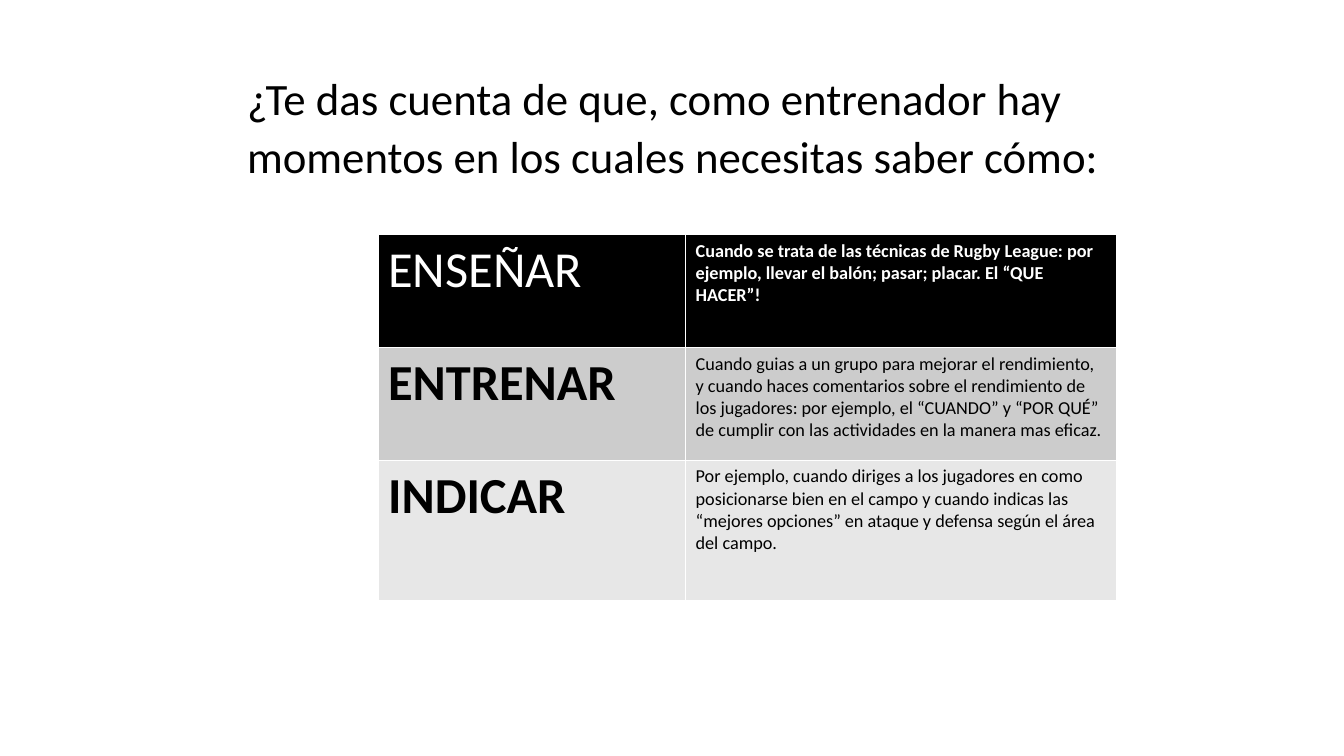
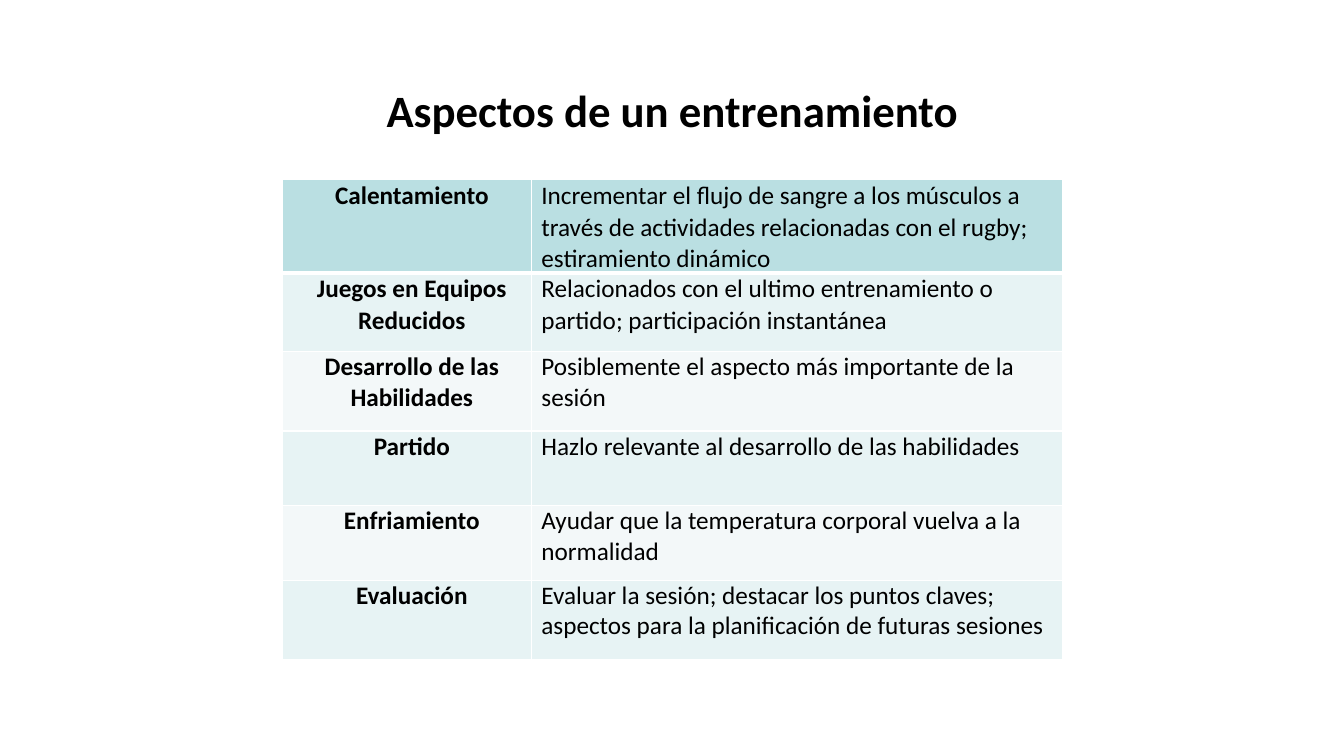
"""Build two slides on coaching roles and the parts of a training session."""
from dataclasses import dataclass

from lxml import etree
from pptx import Presentation
from pptx.dml.color import RGBColor
from pptx.enum import text
from pptx.oxml import ns
from pptx.util import Inches, Pt

FONT = "Calibri"
TITLE_SIZE = 32
COLOURS = {
    "black": "000000", "white": "FFFFFF", "mid grey": "CCCCCC", "light grey": "E7E7E7",
    "teal": "BADFE2", "pale teal": "E7F3F4", "mist": "F3F8F9",
}


@dataclass
class Row:
    label: str
    detail: str
    height: float
    fill: str
    colour: str = "black"
    label_bold: bool = True
    detail_bold: bool = False
    line_spacing: float = 1.0


@dataclass
class Style:
    label_size: float
    detail_size: float
    label_align: int
    margins: tuple
    space_before: float = 0
    divider: float = 1


ROLE_STYLE = Style(36, 13, text.PP_ALIGN.LEFT, (0.1, 0.05, 0.1, 0.05))
ROLES = [
    Row("ENSEÑAR",
        "Cuando se trata de las técnicas de Rugby League: por ejemplo, llevar el balón; "
        "pasar; placar. El “QUE HACER”!",
        1.12, "black", "white", label_bold=False, detail_bold=True),
    Row("ENTRENAR",
        "Cuando guias a un grupo para mejorar el rendimiento, y cuando haces comentarios "
        "sobre el rendimiento de los jugadores: por ejemplo, el “CUANDO” y “POR QUÉ” de "
        "cumplir con las actividades en la manera mas eficaz.",
        1.12, "mid grey"),
    Row("INDICAR",
        "Por ejemplo, cuando diriges a los jugadores en como posicionarse bien en el campo "
        "y cuando indicas las “mejores opciones” en ataque y defensa según el área del campo.",
        1.39, "light grey"),
]

SESSION_STYLE = Style(18, 18, text.PP_ALIGN.CENTER, (0.1, 0, 0, 0), space_before=3.8, divider=3)
SESSION = [
    Row("Calentamiento",
        "Incrementar el flujo de sangre a los músculos a través de actividades relacionadas "
        "con el rugby; estiramiento dinámico",
        0.92, "teal", line_spacing=1.03),
    Row("Juegos en Equipos Reducidos",
        "Relacionados con el ultimo entrenamiento o partido; participación instantánea",
        0.78, "pale teal", line_spacing=1.03),
    Row("Desarrollo de las Habilidades",
        "Posiblemente el aspecto más importante de la sesión", 0.79, "mist"),
    Row("Partido", "Hazlo relevante al desarrollo de las habilidades", 0.74, "pale teal"),
    Row("Enfriamiento", "Ayudar que la temperatura corporal vuelva a la normalidad",
        0.74, "mist"),
    Row("Evaluación",
        "Evaluar la sesión; destacar los puntos claves; aspectos para la planificación "
        "de futuras sesiones",
        0.79, "pale teal"),
]


def rgb(name):
    """Return the named colour."""
    return RGBColor.from_string(COLOURS[name])


def add_run(paragraph, words, size, bold, colour="black"):
    """Add one formatted run."""
    run = paragraph.add_run()
    run.text = words
    run.font.name = FONT
    run.font.size = Pt(size)
    run.font.bold = bold
    run.font.color.rgb = rgb(colour)


def add_titled_slide(deck, words, top, height, bold, align, margins=(0.1, 0.1), spacing=1.0, after=0):
    """Add a slide whose title placeholder carries the heading."""
    slide = deck.slides.add_slide(deck.slide_layouts.get_by_name("Title Only"))
    heading = slide.shapes.title
    heading.left, heading.top = Inches(1.67), Inches(top)
    heading.width, heading.height = Inches(10), Inches(height)
    frame = heading.text_frame
    frame.word_wrap = True
    frame.auto_size = text.MSO_AUTO_SIZE.SHAPE_TO_FIT_TEXT
    frame.vertical_anchor = text.MSO_ANCHOR.MIDDLE
    frame.margin_left, frame.margin_right = map(Inches, margins)
    paragraph = frame.paragraphs[0]
    paragraph.alignment = align
    paragraph.line_spacing = spacing
    paragraph.space_after = Pt(after)
    add_run(paragraph, words, TITLE_SIZE, bold)
    return slide


def set_borders(cell, top, bottom):
    """Give a cell white borders of the given top and bottom widths."""
    properties = cell._tc.get_or_add_tcPr()
    for side, width in (("L", 1), ("R", 1), ("T", top), ("B", bottom)):
        line = etree.SubElement(properties, ns.qn(f"a:ln{side}"), w=str(Pt(width)))
        fill = etree.SubElement(line, ns.qn("a:solidFill"))
        etree.SubElement(fill, ns.qn("a:srgbClr"), val=COLOURS["white"])


def fill_cell(cell, words, size, bold, align, row, style):
    """Format one cell and write its text."""
    cell.fill.solid()
    cell.fill.fore_color.rgb = rgb(row.fill)
    cell.margin_left, cell.margin_top, cell.margin_right, cell.margin_bottom = map(
        Inches, style.margins)
    paragraph = cell.text_frame.paragraphs[0]
    paragraph.alignment = align
    paragraph.line_spacing = row.line_spacing
    paragraph.space_before = Pt(style.space_before)
    add_run(paragraph, words, size, bold, row.colour)


def add_label_table(slide, left, top, widths, rows, style):
    """Add a table of labels and their details."""
    height = sum(row.height for row in rows)
    table = slide.shapes.add_table(
        len(rows), len(widths), Inches(left), Inches(top), Inches(sum(widths)), Inches(height)).table
    table.first_row = table.horz_banding = False
    for column, width in zip(table.columns, widths):
        column.width = Inches(width)
    for index, row in enumerate(rows):
        table.rows[index].height = Inches(row.height)
        label, detail = table.rows[index].cells
        for cell in (label, detail):
            set_borders(cell, style.divider if index == 1 else 1,
                        style.divider if index == 0 else 1)
        fill_cell(label, row.label, style.label_size, row.label_bold, style.label_align, row, style)
        fill_cell(detail, row.detail, style.detail_size, row.detail_bold,
                  text.PP_ALIGN.LEFT, row, style)


def main():
    """Build and save the deck."""
    deck = Presentation()
    deck.slide_width, deck.slide_height = Inches(13.33), Inches(7.5)
    roles = add_titled_slide(
        deck, "¿Te das cuenta de que, como entrenador hay momentos en los cuales necesitas saber cómo:",
        0.62, 1.23, False, text.PP_ALIGN.LEFT, margins=(0.78, 0.6), spacing=1.07, after=8)
    add_label_table(roles, 3.75, 2.33, (3.05, 4.27), ROLES, ROLE_STYLE)
    session = add_titled_slide(
        deck, "Aspectos de un entrenamiento", 0.77, 0.64, True, text.PP_ALIGN.CENTER)
    add_label_table(session, 2.8, 1.78, (2.47, 5.27), SESSION, SESSION_STYLE)
    deck.save("out.pptx")


if __name__ == "__main__":
    main()
